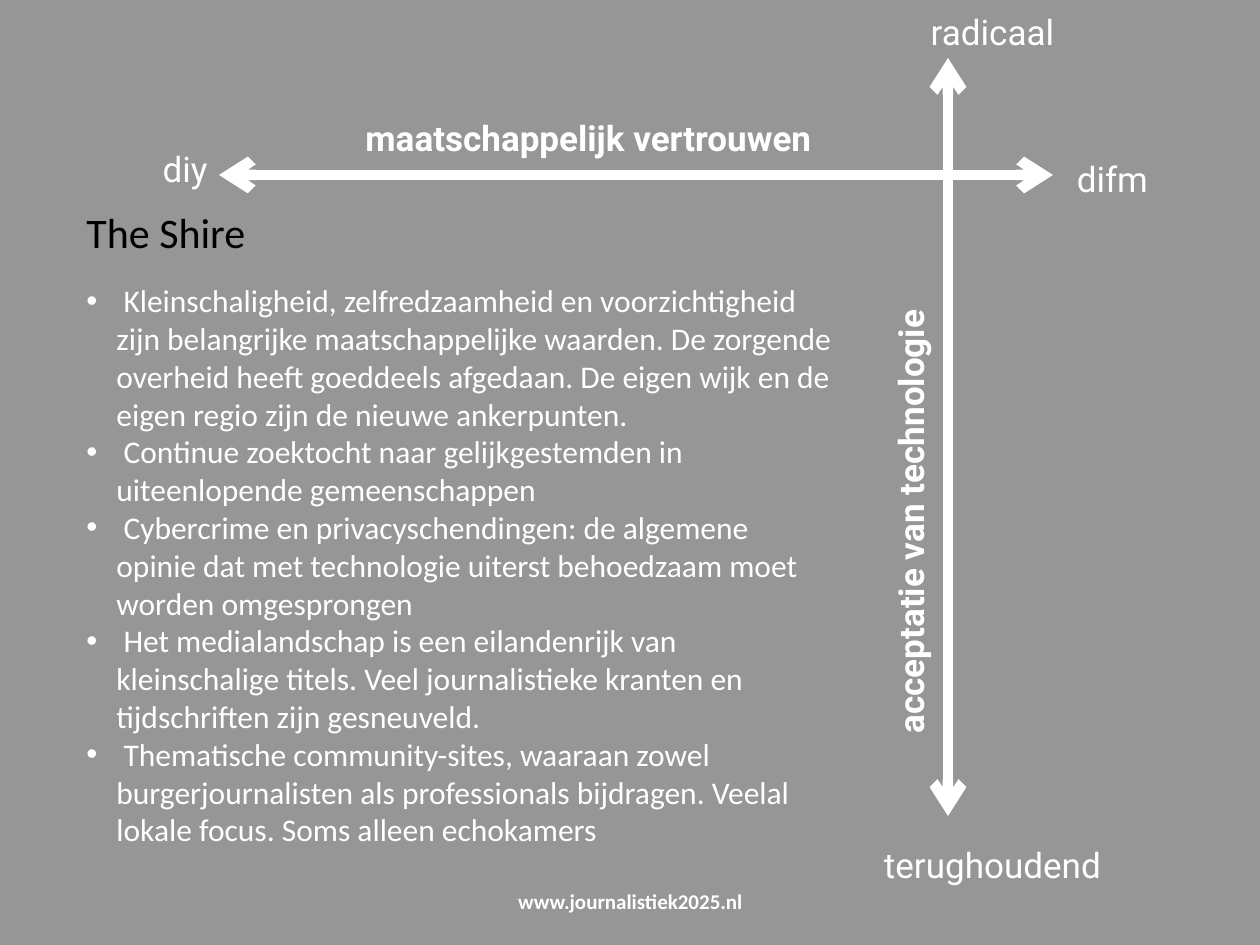
from lxml import etree
from pptx import Presentation
from pptx import util as u
from pptx.dml.color import RGBColor
from pptx.enum import shapes, text
from pptx.oxml.ns import qn

EMU_PER_PX = 914400 / 126
WHITE, BLACK, GREY = "FFFFFF", "000000", "969696"
LEFT, CENTER = text.PP_ALIGN.LEFT, text.PP_ALIGN.CENTER
BULLET_INDENT = 30

AXIS_TITLES = [
    ("maatschappelijk vertrouwen", (353, 110, 662, 55), 0),
    ("acceptatie van technologie", (665, 473, 491, 55), 270),
]
AXIS_ENDS = [
    ("difm", (960, 151, 305, 55)),
    ("diy", (23, 141, 324, 98)),
    ("radicaal", (848, 4, 289, 55)),
    ("terughoudend", (849, 837, 287, 55)),
]
SCENARIO_POINTS = [
    " Kleinschaligheid, zelfredzaamheid en voorzichtigheid zijn belangrijke "
    "maatschappelijke waarden. De zorgende overheid heeft goeddeels afgedaan. "
    "De eigen wijk en de eigen regio zijn de nieuwe ankerpunten.",
    " Continue zoektocht naar gelijkgestemden in uiteenlopende gemeenschappen",
    " Cybercrime en privacyschendingen: de algemene opinie dat met technologie "
    "uiterst behoedzaam moet worden omgesprongen",
    " Het medialandschap is een eilandenrijk van kleinschalige titels. "
    "Veel journalistieke kranten en tijdschriften zijn gesneuveld.",
    " Thematische community-sites, waaraan zowel burgerjournalisten als "
    "professionals bijdragen. Veelal lokale focus. Soms alleen echokamers",
]


def px(length):
    return u.Emu(round(length * EMU_PER_PX))


def color(hex_code):
    return RGBColor.from_string(hex_code)


def add_axis(slide, *ends):
    """Draw a thick line with an open arrowhead at both ends."""
    axis = slide.shapes.add_connector(
        shapes.MSO_CONNECTOR.STRAIGHT, *(px(value) for value in ends))
    axis.line.color.rgb = color(WHITE)
    axis.line.width = u.Pt(6)
    line = axis.line._get_or_add_ln()
    for end in ("a:headEnd", "a:tailEnd"):
        etree.SubElement(line, qn(end), type="arrow")
    etree.SubElement(axis._element.spPr, qn("a:effectLst"))


def add_bullet(paragraph):
    properties = paragraph._p.get_or_add_pPr()
    properties.set("marL", str(px(BULLET_INDENT)))
    properties.set("indent", str(-px(BULLET_INDENT)))
    etree.SubElement(properties, qn("a:buFont"), typeface="Arial")
    etree.SubElement(properties, qn("a:buChar"), char="•")


def add_text(slide, lines, box, size, font="Calibri", hex_code=WHITE,
             bold=False, align=LEFT, bullets=False):
    label = slide.shapes.add_textbox(*(px(value) for value in box))
    frame = label.text_frame
    frame.word_wrap = True
    frame.text = "\n".join(lines)
    for paragraph in frame.paragraphs:
        paragraph.alignment = align
        if bullets:
            add_bullet(paragraph)
        paragraph.font.name = font
        paragraph.font.size = u.Pt(size)
        paragraph.font.bold = bold
        paragraph.font.color.rgb = color(hex_code)
    return label


def main():
    deck = Presentation()
    deck.slide_width, deck.slide_height = px(1260), px(945)
    slide = deck.slides.add_slide(deck.slide_layouts[6])
    slide.background.fill.solid()
    slide.background.fill.fore_color.rgb = color(GREY)

    # Crossing axes with their titles and end labels
    add_axis(slide, 948, 816, 948, 58)
    add_axis(slide, 219, 175, 1053, 175)
    for title, box, rotation in AXIS_TITLES:
        axis_title = add_text(slide, [title], box, 20, "Roboto", bold=True)
        axis_title.rotation = rotation
    for end, box in AXIS_ENDS:
        add_text(slide, [end], box, 20, "Roboto", align=CENTER)

    # Scenario description
    add_text(slide, SCENARIO_POINTS, (74, 275, 774, 585), 18, bullets=True)
    add_text(slide, ["The Shire"], (74, 200, 466, 63), 24, hex_code=BLACK)

    # Footer
    footer = add_text(slide, ["www.journalistiek2025.nl"],
                      (431, 876, 399, 50), 12, bold=True, align=CENTER)
    footer.text_frame.vertical_anchor = text.MSO_ANCHOR.MIDDLE

    deck.save("out.pptx")


if __name__ == "__main__":
    main()
